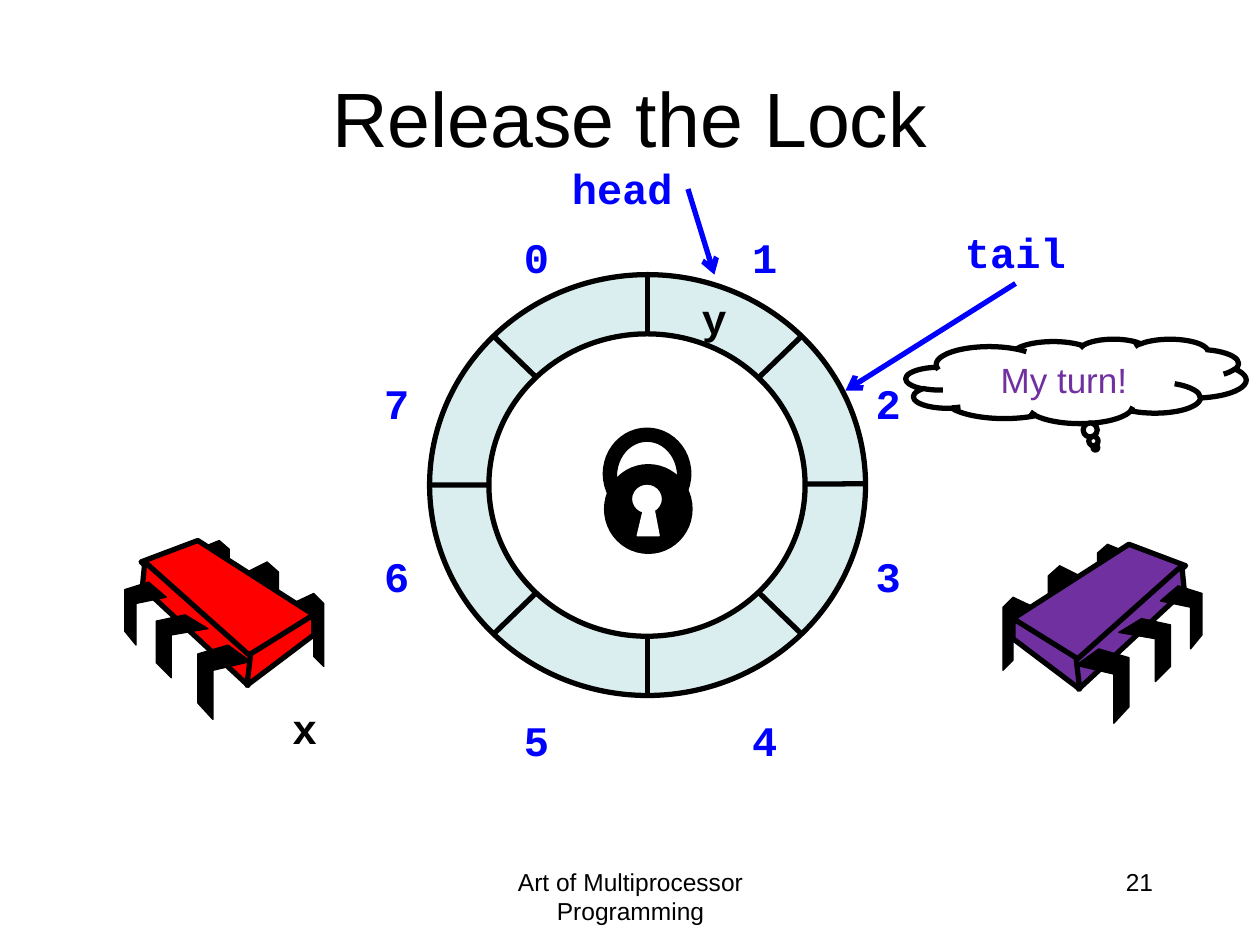
from lxml import etree
from pptx import Presentation
from pptx.dml.color import RGBColor
from pptx.enum.shapes import MSO_CONNECTOR, MSO_SHAPE
from pptx.enum.text import MSO_ANCHOR, PP_ALIGN
from pptx.oxml.ns import qn
from pptx.util import Emu, Pt

PX = 9144  # 100 px to the inch
STRAIGHT = MSO_CONNECTOR.STRAIGHT
OVAL, CLOUD = MSO_SHAPE.OVAL, MSO_SHAPE.CLOUD_CALLOUT
LEFT, CENTER, RIGHT = PP_ALIGN.LEFT, PP_ALIGN.CENTER, PP_ALIGN.RIGHT
TOP, MIDDLE = MSO_ANCHOR.TOP, MSO_ANCHOR.MIDDLE

BLACK = RGBColor(0x00, 0x00, 0x00)
WHITE = RGBColor(0xFF, 0xFF, 0xFF)
BLUE = RGBColor(0x00, 0x00, 0xFF)
RED = RGBColor(0xFF, 0x00, 0x00)
PURPLE = RGBColor(0x70, 0x30, 0xA0)
PALE = RGBColor(0xDA, 0xED, 0xEF)

# text, box, size, alignment, anchor
PAGE_TEXTS = [
    ("Art of Multiprocessor Programming", (342, 683, 317, 50), 14, CENTER, TOP),
    ("21", (717, 683, 208, 50), 14, RIGHT, TOP),
    ("Release the Lock", (50, 30, 900, 125), 44, CENTER, MIDDLE),
]

# text, left, top, colour
CODE_LABELS = [
    ("tail", 756, 175, BLUE), ("head", 444, 124, BLUE),
    ("0", 406, 179, BLUE), ("1", 587, 179, BLUE),
    ("2", 685, 295, BLUE), ("3", 685, 432, BLUE),
    ("4", 587, 562, BLUE), ("5", 406, 562, BLUE),
    ("6", 295, 432, BLUE), ("7", 295, 295, BLUE),
    ("y", 547, 227, BLACK), ("x", 222, 553, BLACK),
]

RING, HOLE = (341, 218, 346, 334), (388, 265, 251, 240)
SPOKES = [(514, 552, 514, 218), (392, 503, 636, 267),
          (341, 385, 687, 384), (392, 267, 636, 503)]
POINTERS = [(806, 225, 671, 310), (546, 150, 567, 218)]

REAR_LEGS = [
    [(232, 479), (249, 471), (257, 479), (257, 529), (249, 521), (249, 488), (232, 496)],
    [(196, 454), (212, 446), (221, 454), (221, 504), (212, 496), (212, 462), (196, 471)],
    [(157, 436), (174, 429), (182, 436), (182, 479), (174, 472), (174, 443), (157, 451)],
]
BODY_FACES = [
    [(157, 429), (249, 488), (197, 522), (112, 446)],
    [(115, 446), (199, 521), (197, 544), (113, 466)],
    [(249, 488), (249, 504), (196, 544), (199, 519)],
]
FRONT_LEGS = [
    [(181, 512), (199, 525), (169, 532), (169, 571), (157, 558), (157, 519)],
    [(147, 488), (165, 499), (136, 504), (136, 538), (124, 526), (124, 493)],
    [(118, 462), (132, 474), (108, 479), (108, 512), (99, 501), (99, 468)],
]
MIRROR_SUM, MIRROR_DROP = 1053, 3

CLOUD_BOX, CLOUD_TIP = (719, 269, 270, 67), (0.057, 0.789)
LOCK_OVALS = [((479, 340, 69, 72), BLACK), ((489, 350, 49, 56), WHITE),
              ((480, 369, 69, 70), BLACK), ((501, 384, 25, 24), WHITE)]
KEYHOLE = [(506, 425), (511, 404), (519, 404), (523, 425)]


def emu(lengths):
    return [Emu(length * PX) for length in lengths]


def paint(shape, fill, line, width):
    shape.shadow.inherit = False
    shape.fill.solid()
    shape.fill.fore_color.rgb = fill
    shape.line.color.rgb = line
    shape.line.width = Pt(width)


def write(shape, text, size, color, align=LEFT, anchor=TOP, name="Arial",
          bold=False, wrap=True):
    frame = shape.text_frame
    frame.text = text
    frame.word_wrap = wrap
    frame.vertical_anchor = anchor
    para = frame.paragraphs[0]
    para.alignment = align
    font = para.runs[0].font
    font.name, font.size, font.bold = name, Pt(size), bold
    font.color.rgb = color


def add_preset(page, kind, box, fill, width):
    shape = page.shapes.add_shape(kind, *emu(box))
    paint(shape, fill, BLACK, width)
    return shape


def add_polygon(page, points, fill, line, width):
    builder = page.shapes.build_freeform(*points[0], scale=PX)
    builder.add_line_segments(points[1:], close=True)
    paint(builder.convert_to_shape(), fill, line, width)


def add_line(page, ends, color, arrow=False):
    line = page.shapes.add_connector(STRAIGHT, *emu(ends))
    line.line.color.rgb = color
    line.line.width = Pt(3)
    properties = line._element.spPr
    if arrow:
        outline = properties.find(qn("a:ln"))
        etree.SubElement(outline, qn("a:tailEnd"), type="arrow")
    etree.SubElement(properties, qn("a:effectLst"))


def add_bug(page, color, mirrored=False):
    def place(points):
        if mirrored:
            return [(MIRROR_SUM - x, y + MIRROR_DROP) for x, y in points]
        return points

    for parts, fill, width in ((REAR_LEGS, BLACK, 0.75), (BODY_FACES, color, 3),
                               (FRONT_LEGS, BLACK, 0.75)):
        for points in parts:
            add_polygon(page, place(points), fill, BLACK, width)


def main():
    deck = Presentation()
    deck.slide_width, deck.slide_height = emu((1000, 750))
    page = deck.slides.add_slide(deck.slide_layouts[6])

    add_preset(page, OVAL, RING, PALE, 3)
    for ends in SPOKES:
        add_line(page, ends, BLACK)
    add_preset(page, OVAL, HOLE, WHITE, 3)

    for text, box, size, align, anchor in PAGE_TEXTS:
        write(page.shapes.add_textbox(*emu(box)), text, size, BLACK, align, anchor)
    for text, left, top, color in CODE_LABELS:
        width = 21 + 20 * len(text)
        box = page.shapes.add_textbox(*emu((left, top, width, 50)))
        write(box, text, 24, color, name="Courier New", bold=True, wrap=False)
    for ends in POINTERS:
        add_line(page, ends, BLUE, arrow=True)

    add_bug(page, RED)
    add_bug(page, PURPLE, mirrored=True)

    cloud = add_preset(page, CLOUD, CLOUD_BOX, WHITE, 3)
    for index, value in enumerate(CLOUD_TIP):
        cloud.adjustments[index] = value
    write(cloud, "My turn!", 20, PURPLE, CENTER, MIDDLE)

    for box, fill in LOCK_OVALS:
        add_preset(page, OVAL, box, fill, 1)
    add_polygon(page, KEYHOLE, WHITE, WHITE, 1)

    deck.save("out.pptx")


if __name__ == "__main__":
    main()
